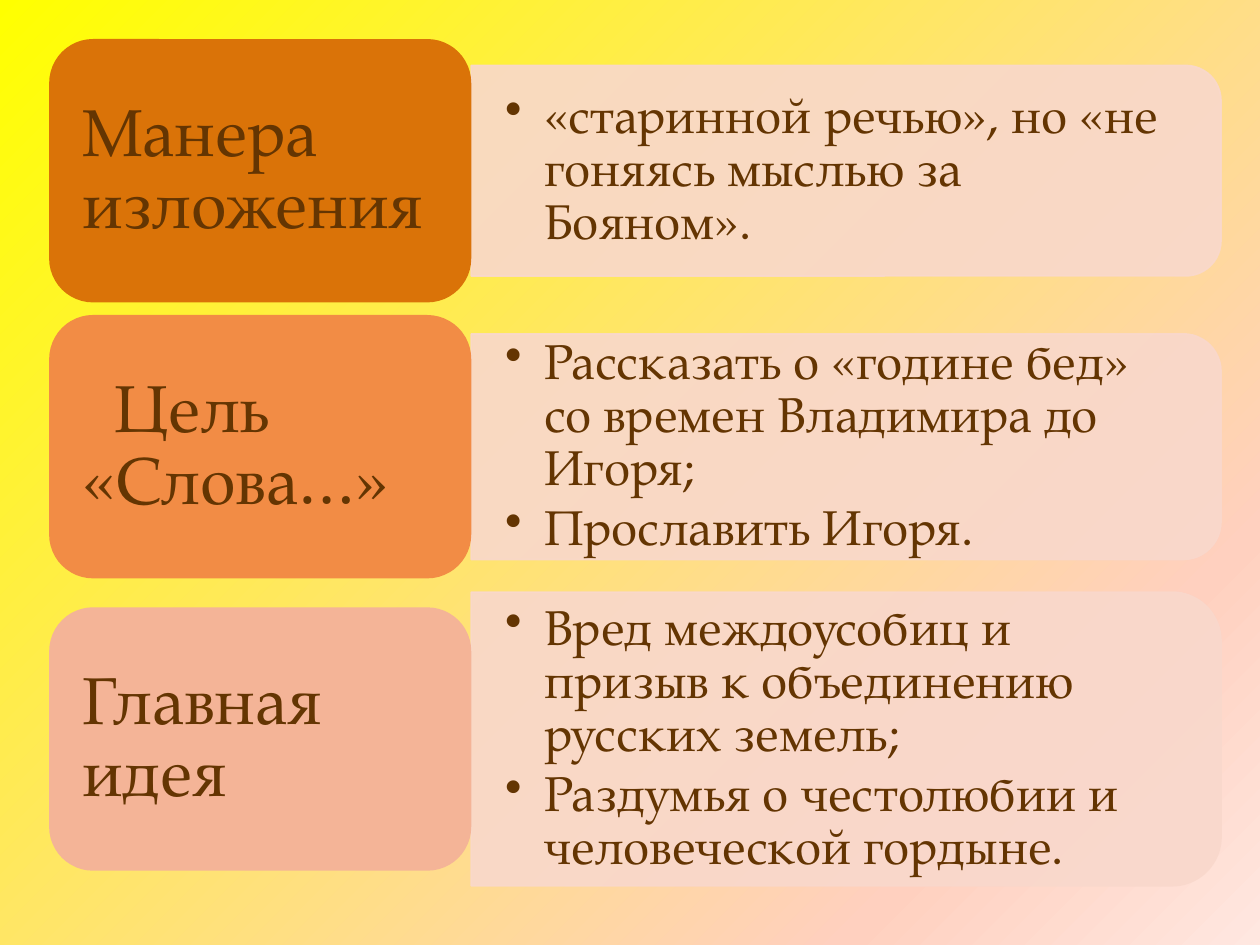
from lxml.etree import SubElement
from pptx import Presentation
from pptx.dml.color import RGBColor
from pptx.enum.shapes import MSO_SHAPE
from pptx.enum.text import MSO_ANCHOR, PP_ALIGN
from pptx.oxml.ns import qn
from pptx.util import Inches, Pt

FONT = "TeX Gyre Pagella"
COLORS = {
    "text": "643502",
    "panel": "F9D8CC",
    "manner": "DA7308",
    "purpose": "F28C45",
    "idea": "F4B497",
}
BACKGROUND_STOPS = [(0, "FFFF00"), (81, "FFD0BF"), (100, "FFE7E0")]
CARD_LEFT, CARD_WIDTH, CARD_HEIGHT = 0.39, 3.35, 2.09
PANEL_LEFT, PANEL_WIDTH = 3.74, 5.95
ROWS = [
    {
        "title": "Манера изложения", "color": "manner", "title_indent": 0,
        "card_top": 0.31, "panel_top": 0.52, "panel_height": 1.67,
        "points": ["«старинной речью», но «не гоняясь мыслью за Бояном»."],
    },
    {
        "title": "Цель «Слова…»", "color": "purpose", "title_indent": 0.26,
        "card_top": 2.5, "panel_top": 2.65, "panel_height": 1.79,
        "points": ["Рассказать о «године бед» со времен Владимира до Игоря;",
                   "Прославить Игоря."],
    },
    {
        "title": "Главная идея", "color": "idea", "title_indent": 0,
        "card_top": 4.82, "panel_top": 4.7, "panel_height": 2.33,
        "points": ["Вред междоусобиц и призыв к объединению русских земель;",
                   "Раздумья о честолюбии и человеческой гордыне."],
    },
]


def paint_background(page):
    """Fill the page with the diagonal gradient."""
    fill = page.background.fill
    fill.gradient()
    fill.gradient_angle = 315
    stop_list = next(page.background._cSld.iter(qn("a:gsLst")))
    for stop in list(stop_list):
        stop_list.remove(stop)
    for position, color in BACKGROUND_STOPS:
        stop = SubElement(stop_list, qn("a:gs"), pos=str(position * 1000))
        SubElement(stop, qn("a:srgbClr"), val=color)


def set_frame(frame, side, end):
    """Wrap and centre the text vertically with the given insets."""
    frame.word_wrap = True
    frame.vertical_anchor = MSO_ANCHOR.MIDDLE
    frame.margin_left = frame.margin_right = Inches(side)
    frame.margin_top = frame.margin_bottom = Inches(end)


def style_paragraph(para, size, space_after, margin, indent, bullet=None):
    """Set spacing, indents, an optional bullet and the font."""
    para.alignment = PP_ALIGN.LEFT
    para.line_spacing = 0.9
    para.space_after = Pt(space_after)
    properties = para._p.get_or_add_pPr()
    properties.set("marL", str(Inches(margin)))
    properties.set("indent", str(Inches(indent)))
    if bullet:
        SubElement(properties, qn("a:buChar"), char=bullet)
    for span in para.runs:
        span.font.name = FONT
        span.font.size = Pt(size)
        span.font.color.rgb = RGBColor.from_string(COLORS["text"])


def add_panel(page, row):
    """Draw the translucent panel, turned so its rounded end faces right."""
    width, height = row["panel_height"], PANEL_WIDTH
    shift = (PANEL_WIDTH - row["panel_height"]) / 2
    panel = page.shapes.add_shape(
        MSO_SHAPE.ROUND_2_SAME_RECTANGLE,
        Inches(PANEL_LEFT + shift), Inches(row["panel_top"] - shift),
        Inches(width), Inches(height))
    panel.rotation = 90
    panel.shadow.inherit = False
    panel.line.width = Pt(1)
    for fill in (panel.fill, panel.line.fill):
        fill.solid()
        fill.fore_color.rgb = RGBColor.from_string(COLORS["panel"])
    for color in panel._element.spPr.iter(qn("a:srgbClr")):
        SubElement(color, qn("a:alpha"), val="90000")


def add_points(page, row):
    """Write the bulleted points over the panel."""
    inset = 0.08
    box = page.shapes.add_textbox(
        Inches(PANEL_LEFT), Inches(row["panel_top"] + inset),
        Inches(PANEL_WIDTH - inset), Inches(row["panel_height"] - 2 * inset))
    frame = box.text_frame
    set_frame(frame, 0.27, 0.14)
    frame.text = "\n".join(row["points"])
    for para in frame.paragraphs:
        style_paragraph(para, 28, 4, 0.31, -0.31, "•")


def add_card(page, row):
    """Draw the coloured card with its title."""
    card = page.shapes.add_shape(
        MSO_SHAPE.ROUNDED_RECTANGLE, Inches(CARD_LEFT), Inches(row["card_top"]),
        Inches(CARD_WIDTH), Inches(CARD_HEIGHT))
    card.shadow.inherit = False
    card.fill.solid()
    card.fill.fore_color.rgb = RGBColor.from_string(COLORS[row["color"]])
    card.line.fill.background()
    set_frame(card.text_frame, 0.16, 0.08)
    card.text_frame.text = row["title"]
    style_paragraph(card.text_frame.paragraphs[0], 38, 13, 0, row["title_indent"])


def main():
    """Build and save the slide."""
    deck = Presentation()
    deck.slide_width, deck.slide_height = Inches(10), Inches(7.5)
    page = deck.slides.add_slide(deck.slide_layouts[6])
    paint_background(page)
    for row in ROWS:
        add_panel(page, row)
        add_points(page, row)
        add_card(page, row)
    deck.save("out.pptx")


if __name__ == "__main__":
    main()
